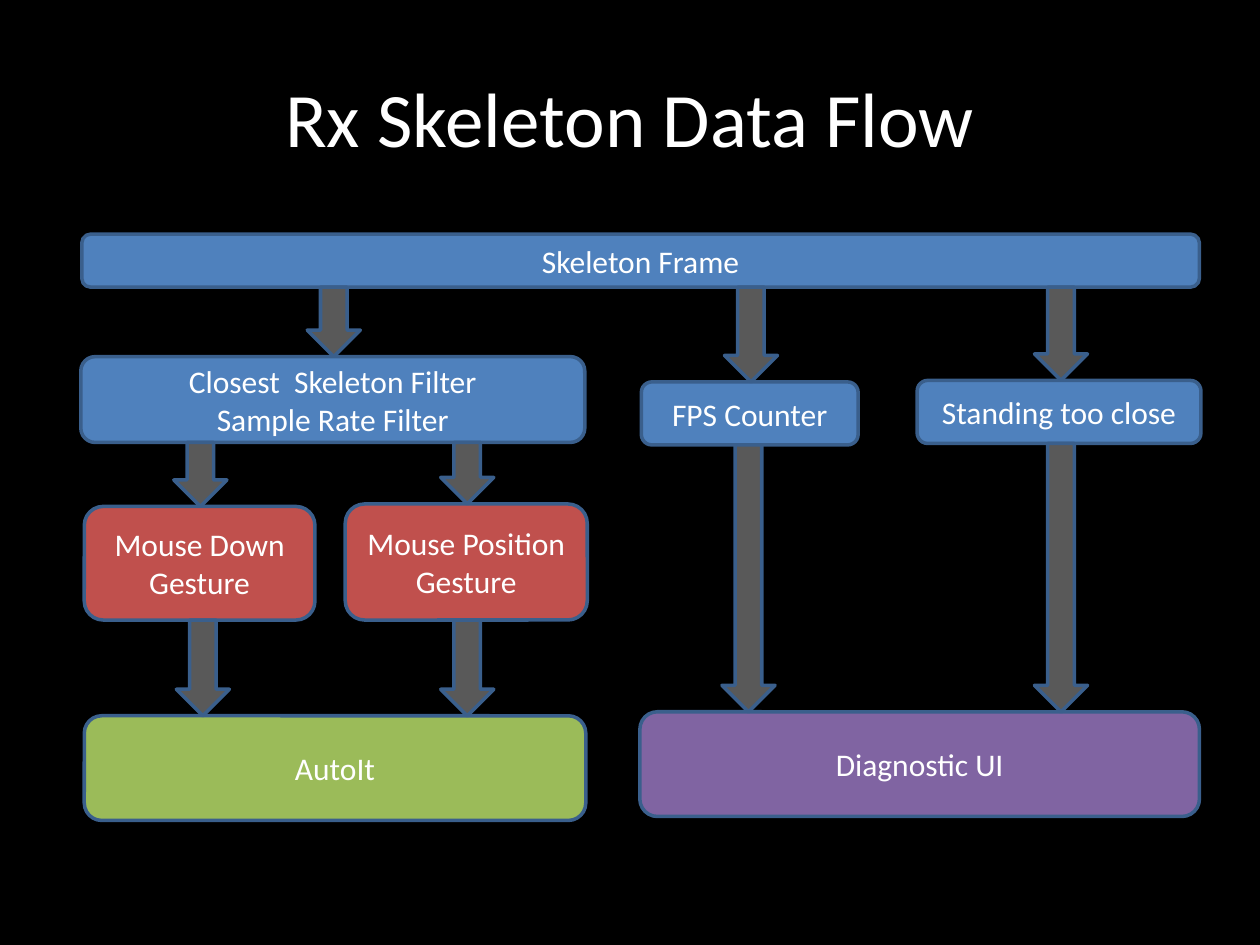
import dataclasses

import pptx
import pptx.dml.color
import pptx.enum.shapes
import pptx.enum.text
import pptx.util

Cm = pptx.util.Cm
Pt = pptx.util.Pt
SHAPE = pptx.enum.shapes.MSO_SHAPE


@dataclasses.dataclass(frozen=True)
class Theme:
    background: str = "000000"
    text: str = "FFFFFF"
    outline: str = "3A5F8C"
    arrow: str = "595959"
    source: str = "4F81BD"
    gesture: str = "C0504D"
    automation: str = "9BBB59"
    diagnostics: str = "8064A2"
    font: str = "Calibri"
    title_size: int = 44
    label_size: int = 18
    outline_width: int = 2


@dataclasses.dataclass(frozen=True)
class Stage:
    """A box of the flow; lengths in centimetres."""
    lines: tuple[str, ...]
    left: float
    top: float
    width: float
    height: float
    color: str

    @property
    def bottom(self) -> float:
        return self.top + self.height


@dataclasses.dataclass(frozen=True)
class Flow:
    """An arrow from the bottom of one stage to the top of another."""
    start: Stage
    end: Stage
    center: float


THEME = Theme()
ARROW_WIDTH = 1.07

# Stages
skeleton_frame = Stage(("Skeleton Frame",), 1.65, 4.72, 22.53, 1.07, THEME.source)
filters = Stage(("Closest  Skeleton Filter", "Sample Rate Filter"),
                1.63, 7.19, 10.16, 1.73, THEME.source)
mouse_down = Stage(("Mouse Down", "Gesture"), 1.7, 10.21, 4.65, 2.29, THEME.gesture)
mouse_position = Stage(("Mouse Position", "Gesture"), 6.96, 10.16, 4.88, 2.34, THEME.gesture)
fps_counter = Stage(("FPS Counter",), 12.93, 7.7, 4.37, 1.27, THEME.source)
too_close = Stage(("Standing too close",), 18.49, 7.67, 5.72, 1.27, THEME.source)
autoit = Stage(("AutoIt",), 1.7, 14.43, 10.11, 2.11, THEME.automation)
diagnostic_ui = Stage(("Diagnostic UI",), 12.9, 14.35, 11.28, 2.11, THEME.diagnostics)

STAGES = (skeleton_frame, filters, mouse_down, mouse_position,
          fps_counter, too_close, autoit, diagnostic_ui)

# Flows between the stages
FLOWS = (
    Flow(skeleton_frame, filters, 6.73),
    Flow(skeleton_frame, fps_counter, 15.14),
    Flow(skeleton_frame, too_close, 21.39),
    Flow(filters, mouse_down, 4.04),
    Flow(filters, mouse_position, 9.42),
    Flow(mouse_down, autoit, 4.09),
    Flow(mouse_position, autoit, 9.42),
    Flow(fps_counter, diagnostic_ui, 15.09),
    Flow(too_close, diagnostic_ui, 21.39),
)


def rgb(color: str) -> pptx.dml.color.RGBColor:
    return pptx.dml.color.RGBColor.from_string(color)


def write_lines(frame, lines: tuple[str, ...], size: int) -> None:
    frame.word_wrap = True
    frame.vertical_anchor = pptx.enum.text.MSO_ANCHOR.MIDDLE
    for index, line in enumerate(lines):
        paragraph = frame.add_paragraph() if index else frame.paragraphs[0]
        paragraph.alignment = pptx.enum.text.PP_ALIGN.CENTER
        run = paragraph.add_run()
        run.text = line
        run.font.name = THEME.font
        run.font.size = Pt(size)
        run.font.color.rgb = rgb(THEME.text)


def draw_outlined(slide, preset, left: float, top: float,
                  width: float, height: float, color: str):
    outlined = slide.shapes.add_shape(preset, Cm(left), Cm(top), Cm(width), Cm(height))
    outlined.shadow.inherit = False
    outlined.fill.solid()
    outlined.fill.fore_color.rgb = rgb(color)
    outlined.line.color.rgb = rgb(THEME.outline)
    outlined.line.width = Pt(THEME.outline_width)
    return outlined


def draw_stage(slide, stage: Stage) -> None:
    box = draw_outlined(slide, SHAPE.ROUNDED_RECTANGLE, stage.left, stage.top,
                        stage.width, stage.height, stage.color)
    write_lines(box.text_frame, stage.lines, THEME.label_size)


def draw_flow(slide, flow: Flow) -> None:
    draw_outlined(slide, SHAPE.DOWN_ARROW, flow.center - ARROW_WIDTH / 2,
                  flow.start.bottom, ARROW_WIDTH,
                  flow.end.top - flow.start.bottom, THEME.arrow)


def main() -> None:
    deck = pptx.Presentation()
    deck.slide_width, deck.slide_height = Cm(25.4), Cm(19.05)
    slide = deck.slides.add_slide(deck.slide_layouts.get_by_name("Title Only"))
    slide.background.fill.solid()
    slide.background.fill.fore_color.rgb = rgb(THEME.background)

    # Title
    title = slide.shapes.title
    title.left, title.top, title.width, title.height = Cm(1.27), Cm(0.76), Cm(22.86), Cm(3.18)
    write_lines(title.text_frame, ("Rx Skeleton Data Flow",), THEME.title_size)

    # Diagram
    for stage in STAGES:
        draw_stage(slide, stage)
    for flow in FLOWS:
        draw_flow(slide, flow)

    deck.save("out.pptx")


if __name__ == "__main__":
    main()
